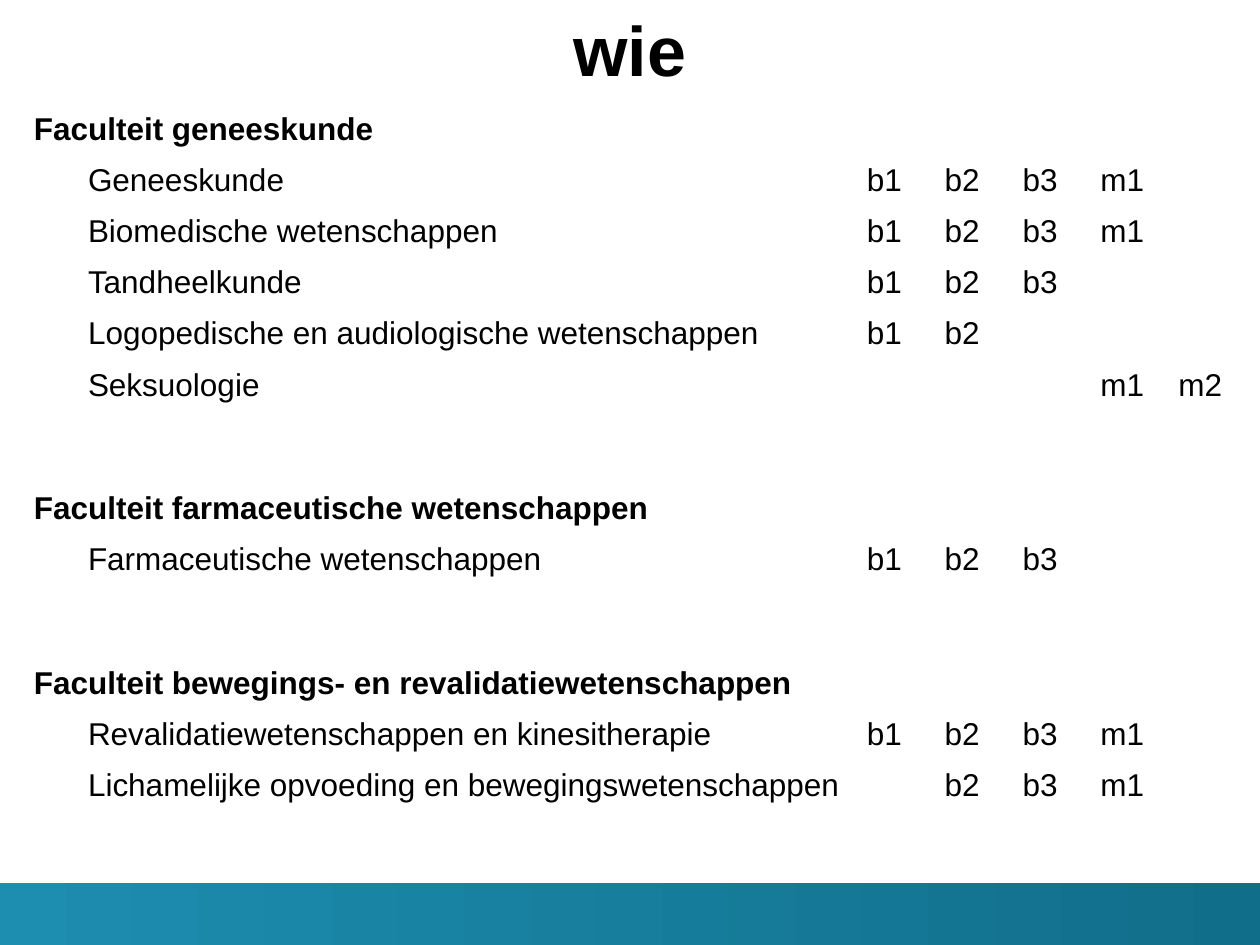
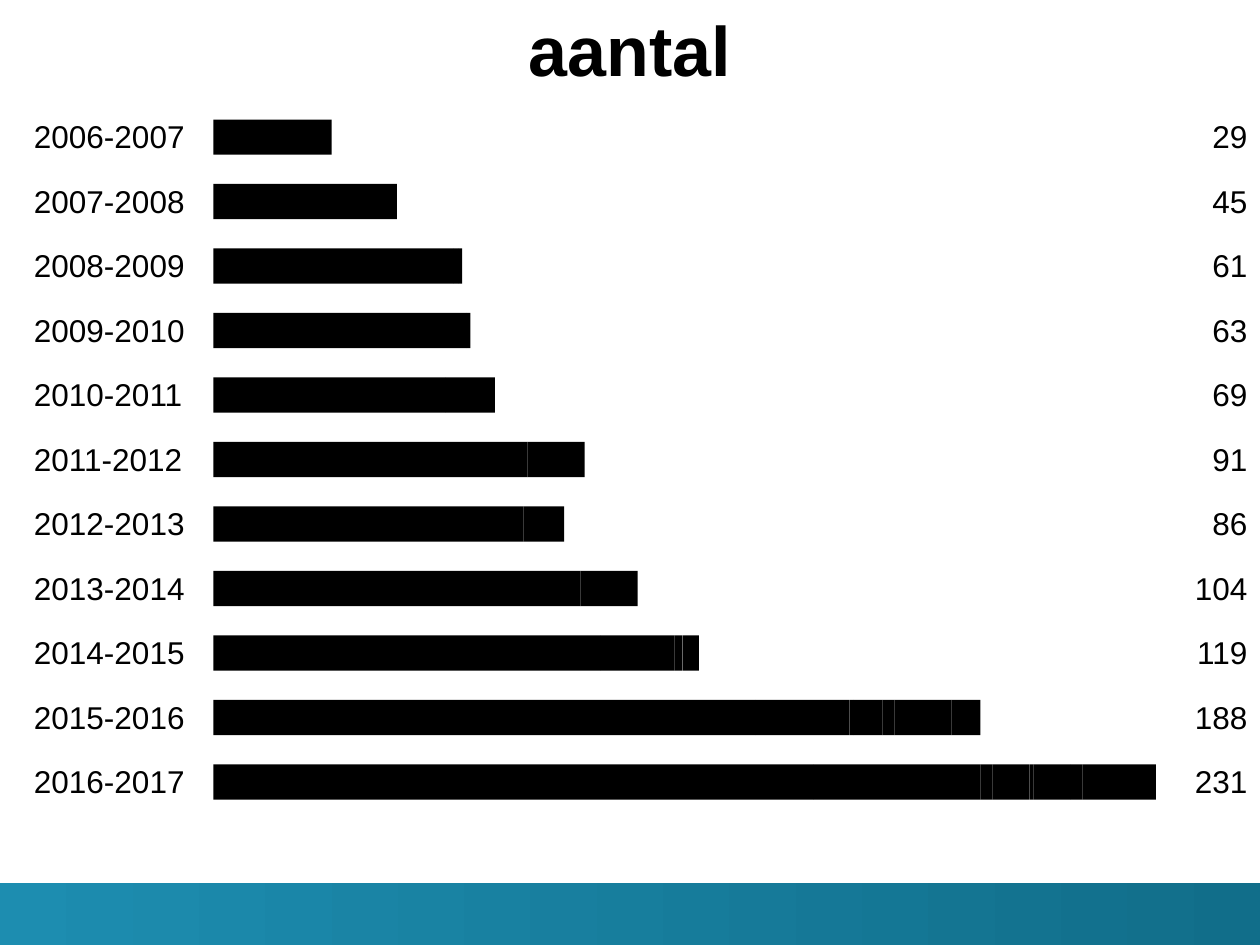
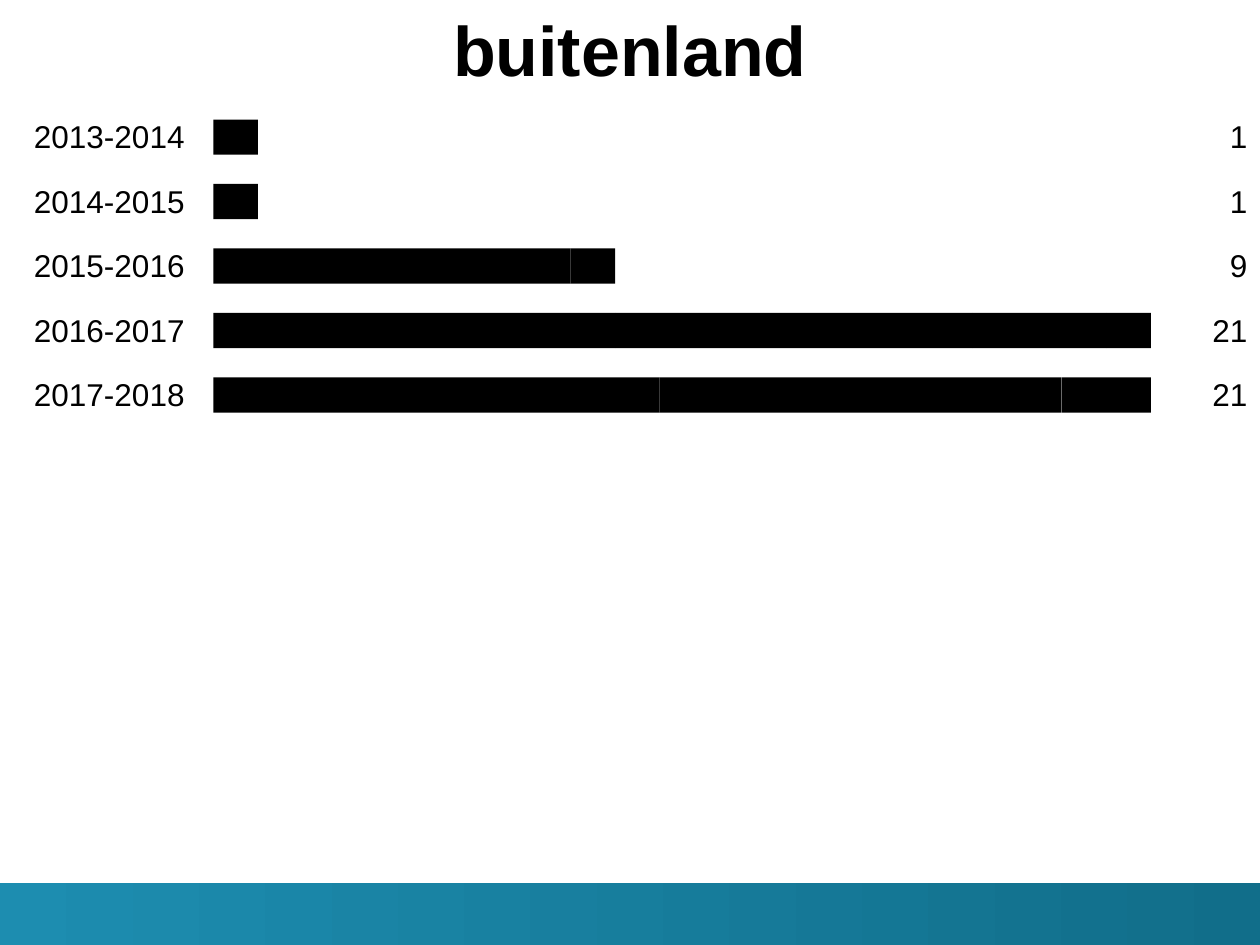
from dataclasses import dataclass

from pptx import Presentation
from pptx.dml.color import RGBColor
from pptx.enum.shapes import MSO_SHAPE
from pptx.enum.text import MSO_ANCHOR, PP_ALIGN
from pptx.util import Cm, Pt

RECTANGLE = MSO_SHAPE.RECTANGLE
CENTER, RIGHT = PP_ALIGN.CENTER, PP_ALIGN.RIGHT
MIDDLE = MSO_ANCHOR.MIDDLE


@dataclass(frozen=True)
class Theme:
    font: str = "Arial"
    ink: RGBColor = RGBColor(0, 0, 0)
    band_start: RGBColor = RGBColor(0x1D, 0x8D, 0xB0)
    band_end: RGBColor = RGBColor(0x11, 0x6E, 0x8A)
    title_size: Pt = Pt(40)
    body_size: Pt = Pt(18)


THEME = Theme()
SLIDE_WIDTH, SLIDE_HEIGHT = Cm(25.4), Cm(19.05)
BAND_TOP = Cm(17.8)
TABLE_LEFT, TABLE_TOP = Cm(0.43), Cm(2.13)

PHASES = ["b1", "b2", "b3", "m1", "m2"]
PHASE_WIDTHS = [Cm(16.79)] + [Cm(1.57)] * len(PHASES)
PROGRAMME_ROW, LAST_PROGRAMME_ROW = Cm(1.03), Cm(2.49)
PROGRAMME_INDENT = Cm(1.09)

YEAR_WIDTHS = [Cm(3.68), Cm(0.33)] + [Cm(3.99)] * 4 + [Cm(3.12), Cm(1.6)]
YEAR_ROWS = 11
YEAR_ROW, CLOSING_ROW = Cm(1.3), Cm(0.89)
BAR_LEFT, BAR_TOP, BAR_HEIGHT = Cm(4.3), Cm(2.41), Cm(0.71)

# Each faculty lists its programmes with the phases that take part.
FACULTIES = {
    "Faculteit geneeskunde": {
        "Geneeskunde": "b1 b2 b3 m1",
        "Biomedische wetenschappen": "b1 b2 b3 m1",
        "Tandheelkunde": "b1 b2 b3",
        "Logopedische en audiologische wetenschappen": "b1 b2",
        "Seksuologie": "m1 m2",
    },
    "Faculteit farmaceutische wetenschappen": {
        "Farmaceutische wetenschappen": "b1 b2 b3",
    },
    "Faculteit bewegings- en revalidatiewetenschappen": {
        "Revalidatiewetenschappen en kinesitherapie": "b1 b2 b3 m1",
        "Lichamelijke opvoeding en bewegingswetenschappen": "b2 b3 m1",
    },
}

# Each year lists the group sizes that add up to its total.
STUDENTS = {
    "2006-2007": [29],
    "2007-2008": [45],
    "2008-2009": [59, 1, 1],
    "2009-2010": [59, 3, 1],
    "2010-2011": [57, 12],
    "2011-2012": [77, 14],
    "2012-2013": [76, 10],
    "2013-2014": [90, 14],
    "2014-2015": [95, 18, 2, 4],
    "2015-2016": [133, 23, 1, 7, 3, 14, 7],
    "2016-2017": [147, 41, 3, 9, 1, 9, 3, 18],
}
STUDENTS_ABROAD = {
    "2013-2014": [1],
    "2014-2015": [1],
    "2015-2016": [8, 1],
    "2016-2017": [9, 8, 3, 1],
    "2017-2018": [10, 9, 2],
}


def write(frame, text, size=THEME.body_size, bold=False, align=None):
    paragraph = frame.paragraphs[0]
    paragraph.text = text
    paragraph.alignment = align
    for run in paragraph.runs:
        run.font.name = THEME.font
        run.font.size = size
        run.font.bold = bold
        run.font.color.rgb = THEME.ink
    return paragraph


def add_rectangle(slide, left, top, width, height):
    rectangle = slide.shapes.add_shape(RECTANGLE, left, top, width, height)
    rectangle.shadow.inherit = False
    rectangle.line.fill.background()
    return rectangle


def add_titled_slide(deck, title):
    """Add a blank slide with the shared bottom band and title."""
    slide = deck.slides.add_slide(deck.slide_layouts[6])
    band = add_rectangle(slide, 0, BAND_TOP, SLIDE_WIDTH, SLIDE_HEIGHT - BAND_TOP)
    band.fill.gradient()
    band.fill.gradient_angle = 0
    for stop, color in zip(band.fill.gradient_stops, (THEME.band_start, THEME.band_end)):
        stop.color.rgb = color

    heading = slide.shapes.add_textbox(0, 0, SLIDE_WIDTH, Cm(1.96)).text_frame
    heading.word_wrap = True
    write(heading, title, THEME.title_size, bold=True, align=CENTER)
    return slide


def add_plain_table(slide, widths, heights):
    """Add a table without fills or heading style."""
    table = slide.shapes.add_table(
        len(heights), len(widths), TABLE_LEFT, TABLE_TOP, sum(widths), sum(heights)
    ).table
    table.first_row = table.horz_banding = False
    for column, width in zip(table.columns, widths):
        column.width = width
    for row, height in zip(table.rows, heights):
        row.height = height
    for cell in table.iter_cells():
        cell.fill.background()
    return table


def add_faculty_table(slide):
    heights = []
    for programmes in FACULTIES.values():
        heights += [PROGRAMME_ROW] * len(programmes) + [LAST_PROGRAMME_ROW]
    heights[-1] = PROGRAMME_ROW
    table = add_plain_table(slide, PHASE_WIDTHS, heights)

    row = 0
    for faculty, programmes in FACULTIES.items():
        write(table.cell(row, 0).text_frame, faculty, bold=True)
        for row, (programme, phases) in enumerate(programmes.items(), row + 1):
            name = write(table.cell(row, 0).text_frame, programme)
            name._p.get_or_add_pPr().set("indent", str(PROGRAMME_INDENT))
            for phase in phases.split():
                column = PHASES.index(phase) + 1
                write(table.cell(row, column).text_frame, phase)
        row += 1


def add_year_table(slide, years):
    """List the years at the left and their totals at the right."""
    table = add_plain_table(slide, YEAR_WIDTHS, [YEAR_ROW] * YEAR_ROWS + [CLOSING_ROW])
    for row in range(YEAR_ROWS):
        table.cell(row, 1).merge(table.cell(row, 6))
    for first in (0, 6):
        table.cell(YEAR_ROWS, first).merge(table.cell(YEAR_ROWS, first + 1))

    for row, (year, groups) in enumerate(years.items()):
        year_cell, total_cell = table.cell(row, 0), table.cell(row, 7)
        year_cell.vertical_anchor = total_cell.vertical_anchor = MIDDLE
        write(year_cell.text_frame, year)
        write(total_cell.text_frame, str(sum(groups)), align=RIGHT)


def add_year_bars(slide, years, longest):
    """Draw each year's groups end to end; the largest total gets the longest bar."""
    student_width = longest / max(map(sum, years.values()))
    for row, groups in enumerate(years.values()):
        left = BAR_LEFT
        for group in groups:
            width = round(group * student_width)
            bar = add_rectangle(slide, left, BAR_TOP + row * YEAR_ROW, width, BAR_HEIGHT)
            bar.fill.solid()
            bar.fill.fore_color.rgb = THEME.ink
            left += width


def main():
    deck = Presentation()
    deck.slide_width, deck.slide_height = SLIDE_WIDTH, SLIDE_HEIGHT

    add_faculty_table(add_titled_slide(deck, "wie"))
    for title, years, longest in (
        ("aantal", STUDENTS, Cm(19)),
        ("buitenland", STUDENTS_ABROAD, Cm(18.9)),
    ):
        slide = add_titled_slide(deck, title)
        add_year_table(slide, years)
        add_year_bars(slide, years, longest)

    deck.save("out.pptx")


if __name__ == "__main__":
    main()
